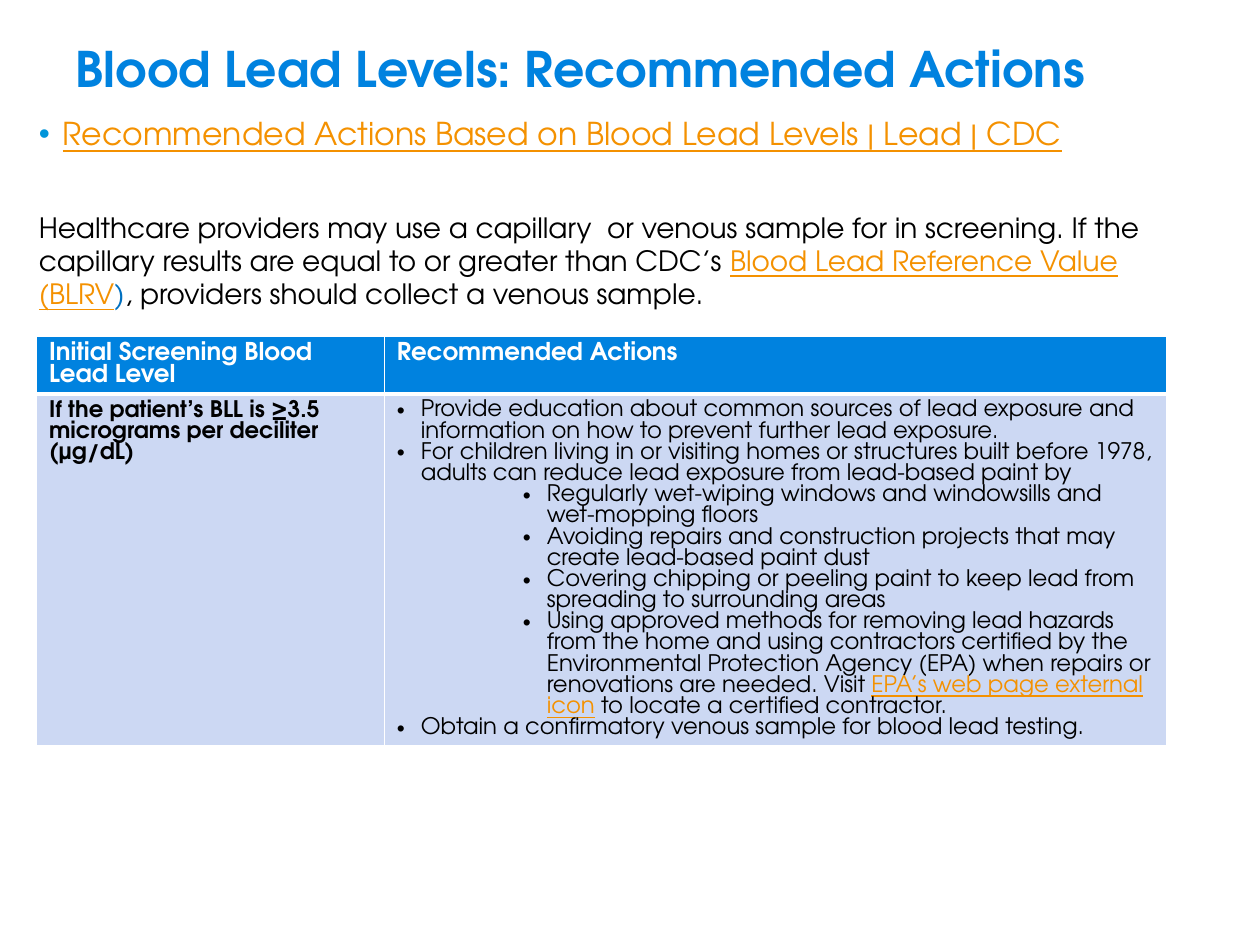
from typing import NamedTuple, Optional

from lxml.etree import SubElement
from pptx import Presentation
from pptx.dml.color import RGBColor
from pptx.enum.text import MSO_ANCHOR, MSO_AUTO_SIZE, PP_ALIGN
from pptx.oxml.ns import qn
from pptx.util import Inches, Pt

FONT = "TeX Gyre Adventor"
BLUE = RGBColor(0x00, 0x82, 0xDF)
BULLET_BLUE = RGBColor(0x00, 0x95, 0xDA)
LINK_BLUE = RGBColor(0x00, 0x70, 0xC0)
ORANGE = RGBColor(0xF4, 0x91, 0x00)
PALE_BLUE = RGBColor(0xCC, 0xD8, 0xF3)
BLACK = RGBColor(0x00, 0x00, 0x00)
WHITE = RGBColor(0xFF, 0xFF, 0xFF)


class Piece(NamedTuple):
    text: str
    color: RGBColor = BLACK
    underline: bool = False


class Action(NamedTuple):
    pieces: list[Piece]
    level: int = 0


INTRODUCTION = [
    Piece("Healthcare providers may use a capillary  or venous sample for in screening. "
          "If the capillary results are equal to or greater than CDC’s "),
    Piece("Blood Lead Reference Value (BLRV", ORANGE, True),
    Piece(")", LINK_BLUE),
    Piece(", providers should collect a venous sample."),
]
ACTIONS = [
    Action([Piece("Provide education about common sources of lead exposure and information "
                  "on how to prevent further lead exposure.")]),
    Action([Piece("For children living in or visiting homes or structures built before 1978, "
                  "adults can reduce lead exposure from lead-based paint by")]),
    Action([Piece("Regularly wet-wiping windows and windowsills and wet-mopping floors")], 2),
    Action([Piece("Avoiding repairs and construction projects that may create "
                  "lead-based paint dust")], 2),
    Action([Piece("Covering chipping or peeling paint to keep lead from spreading "
                  "to surrounding areas")], 2),
    Action([Piece("Using approved methods for removing lead hazards from the home and using "
                  "contractors certified by the Environmental Protection Agency (EPA) when "
                  "repairs or renovations are needed. Visit "),
            Piece("EPA’s web page external icon", ORANGE, True),
            Piece(" ", LINK_BLUE),
            Piece("to locate a certified contractor.")], 2),
    Action([Piece("Obtain a confirmatory venous sample for blood lead testing.")]),
]


def write_paragraph(frame, pieces: list[Piece], *, size: float, line: float,
                    bold: bool = False, before: float = 0, after: float = 0,
                    bullet: Optional[RGBColor] = None, level: int = 0) -> None:
    paragraph = frame.paragraphs[0]
    if paragraph.runs:
        paragraph = frame.add_paragraph()
    paragraph.level = level
    if bullet is not None:
        properties = paragraph._p.get_or_add_pPr()
        properties.set("marL", str(Inches(0.19 + 0.5 * level)))
        properties.set("indent", str(Inches(-0.19)))
        bullet_color = SubElement(properties, qn("a:buClr"))
        SubElement(bullet_color, qn("a:srgbClr"), val=str(bullet))
        SubElement(properties, qn("a:buFont"), typeface="Arial")
        SubElement(properties, qn("a:buChar"), char="•")
    paragraph.alignment = PP_ALIGN.LEFT
    paragraph.line_spacing = Pt(line)
    paragraph.space_before = Pt(before)
    paragraph.space_after = Pt(after)
    for piece in pieces:
        run = paragraph.add_run()
        run.text = piece.text
        run.font.name = FONT
        run.font.size = Pt(size)
        run.font.bold = bold
        run.font.underline = piece.underline
        run.font.color.rgb = piece.color


def format_cell(cell, fill: RGBColor, bottom: float) -> None:
    properties = cell._tc.get_or_add_tcPr()
    for side, width in (("L", 1), ("R", 1), ("T", 1), ("B", bottom)):
        border = SubElement(properties, qn(f"a:ln{side}"), w=str(Pt(width)))
        border_fill = SubElement(border, qn("a:solidFill"))
        SubElement(border_fill, qn("a:srgbClr"), val=str(WHITE))
    cell.fill.solid()
    cell.fill.fore_color.rgb = fill
    cell.vertical_anchor = MSO_ANCHOR.TOP


def add_title(slide) -> None:
    title = slide.shapes.title
    title.left, title.top = Inches(0.5), Inches(0.26)
    title.width, title.height = Inches(9), Inches(0.65)
    frame = title.text_frame
    frame.auto_size = MSO_AUTO_SIZE.NONE
    frame.vertical_anchor = MSO_ANCHOR.TOP
    write_paragraph(frame, [Piece("Blood Lead Levels: Recommended Actions", BLUE)],
                    size=28, line=33.3, bold=True)


def add_introduction(slide) -> None:
    box = slide.shapes.add_textbox(Inches(0.21), Inches(0.86), Inches(9.29), Inches(5.45))
    frame = box.text_frame
    frame.word_wrap = True
    heading = Piece("Recommended Actions Based on Blood Lead Levels | Lead | CDC", ORANGE, True)
    write_paragraph(frame, [heading], size=18, line=21.4, after=3, bullet=BULLET_BLUE)
    write_paragraph(frame, INTRODUCTION, size=16, line=19.05, before=30.4, after=3)


def add_action_table(slide) -> None:
    table = slide.shapes.add_table(2, 2, Inches(0.29), Inches(2.67),
                                   Inches(8.97), Inches(3.24)).table
    for column, width in zip(table.columns, (2.76, 6.21)):
        column.width = Inches(width)
    for row, height in zip(table.rows, (0.45, 2.79)):
        row.height = Inches(height)
    for index, heading in enumerate(("Initial Screening Blood Lead Level",
                                     "Recommended Actions")):
        format_cell(table.cell(0, index), BLUE, bottom=3)
        format_cell(table.cell(1, index), PALE_BLUE, bottom=1)
        write_paragraph(table.cell(0, index).text_frame, [Piece(heading, WHITE)],
                        size=14, line=12.8, bold=True)
    level = Piece("If the patient’s BLL is ≥3.5 micrograms per deciliter (μg/dL)")
    write_paragraph(table.cell(1, 0).text_frame, [level], size=13, line=12.1, bold=True)
    for action in ACTIONS:
        write_paragraph(table.cell(1, 1).text_frame, action.pieces, size=13, line=12.1,
                        bullet=BLACK, level=action.level)


def main() -> None:
    presentation = Presentation()
    presentation.slide_width = Inches(10)
    presentation.slide_height = Inches(7.5)
    slide = presentation.slides.add_slide(presentation.slide_layouts[5])
    add_title(slide)
    add_introduction(slide)
    add_action_table(slide)
    presentation.save("out.pptx")


if __name__ == "__main__":
    main()
